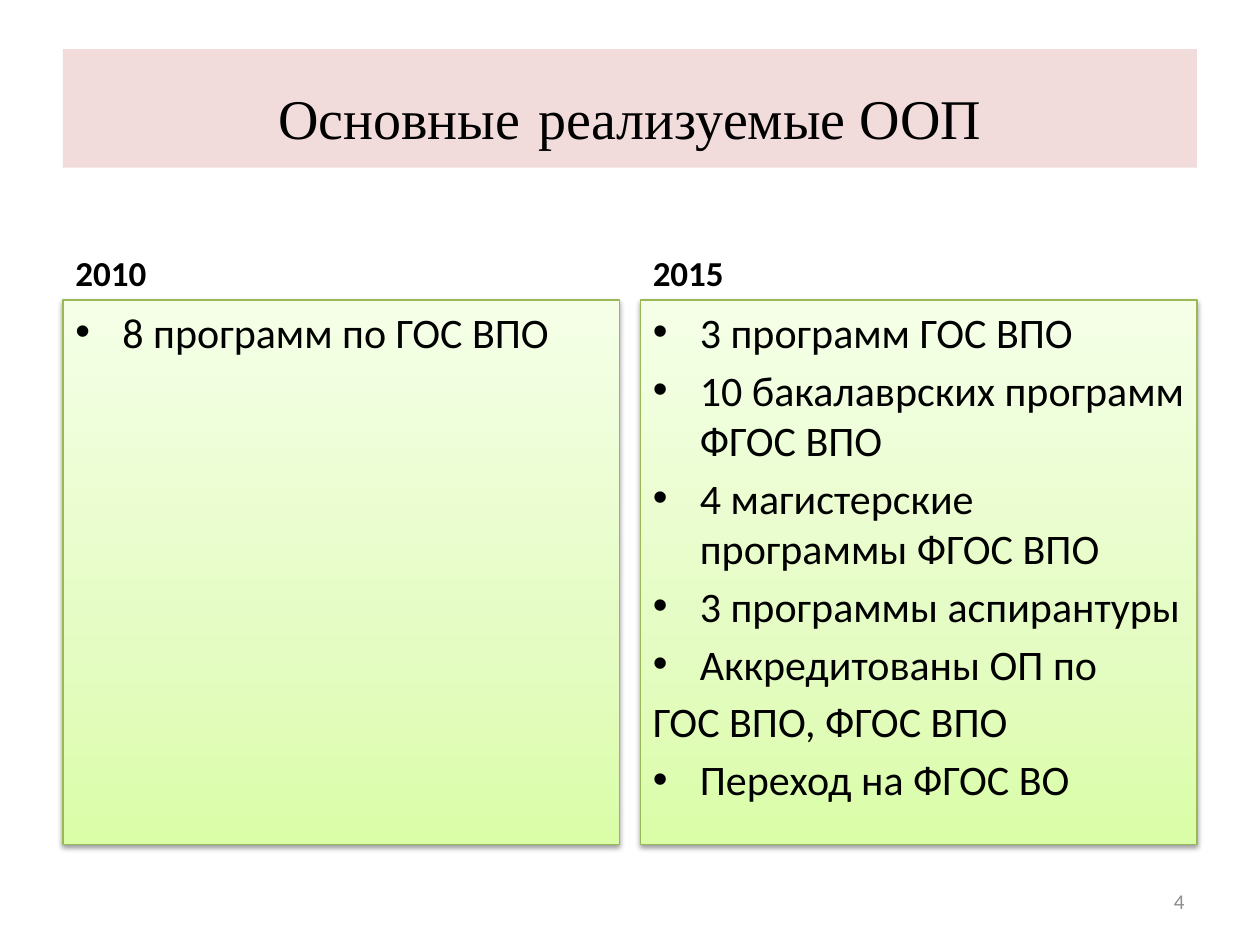
import copy

import lxml.etree
import pptx
import pptx.dml.color
import pptx.enum.shapes
import pptx.enum.text
import pptx.oxml
import pptx.oxml.ns
import pptx.util

Cm = pptx.util.Cm
Pt = pptx.util.Pt
ALIGN = pptx.enum.text.PP_ALIGN
ANCHOR = pptx.enum.text.MSO_ANCHOR
qn = pptx.oxml.ns.qn

MARGIN = 1.27
CONTENT_WIDTH = 22.86
COLUMN_WIDTH = 11.22
GREEN_STOPS = [(0, "DAFDA7"), (0.35, "E4FCC2"), (1, "F5FFE7")]
BULLET_INDENT = Cm(0.95)
COLUMNS = [
    ("2010", ["8 программ по ГОС ВПО"]),
    ("2015", [
        "3 программ ГОС ВПО",
        "10 бакалаврских программ ФГОС ВПО",
        "4 магистерские программы ФГОС ВПО",
        "3 программы аспирантуры",
        "Аккредитованы ОП по",
        "ГОС ВПО, ФГОС ВПО",
        "Переход на ФГОС ВО",
    ]),
]
UNBULLETED = {"ГОС ВПО, ФГОС ВПО"}


def color(value):
    return pptx.dml.color.RGBColor.from_string(value)


def style_font(font, size, name="Calibri", fill="000000", bold=False):
    font.size = Pt(size)
    font.name = name
    font.bold = bold
    font.color.rgb = color(fill)


def add_rectangle(slide, left, top, width, height):
    shape = slide.shapes.add_shape(
        pptx.enum.shapes.MSO_SHAPE.RECTANGLE,
        Cm(left), Cm(top), Cm(width), Cm(height))
    shape.shadow.inherit = False
    return shape


def add_label(slide, text, box, size, anchor, align=ALIGN.LEFT, **font_style):
    label = slide.shapes.add_textbox(*(Cm(length) for length in box))
    frame = label.text_frame
    frame.word_wrap = True
    frame.vertical_anchor = anchor
    frame.text = text
    paragraph = frame.paragraphs[0]
    paragraph.alignment = align
    style_font(paragraph.runs[0].font, size, **font_style)


def add_title(slide):
    shape = add_rectangle(slide, MARGIN, 0.99, CONTENT_WIDTH, 2.39)
    shape.fill.solid()
    shape.fill.fore_color.rgb = color("F2DCDB")
    shape.line.fill.background()
    shape.text_frame.vertical_anchor = ANCHOR.MIDDLE
    paragraph = shape.text_frame.paragraphs[0]
    paragraph.alignment = ALIGN.CENTER
    for text, size, name in [("Основные", 32, "Times New Roman"),
                             (" ", 44, "Calibri"),
                             ("реализуемые ООП", 32, "Times New Roman")]:
        run = paragraph.add_run()
        run.text = text
        style_font(run.font, size, name)


def fill_gradient(shape, stops):
    """Fill from bottom to top with any number of stops."""
    shape.fill.gradient()
    shape.fill.gradient_angle = 90
    stop_list = shape.element.spPr.find(".//" + qn("a:gsLst"))
    for _ in range(len(stops) - len(stop_list)):
        stop_list.append(copy.deepcopy(stop_list[0]))
    for stop, (position, value) in zip(shape.fill.gradient_stops, stops):
        stop.position = position
        stop.color.rgb = color(value)


def add_shadow(shape):
    effects = shape.element.spPr.find(qn("a:effectLst"))
    shadow = lxml.etree.SubElement(
        effects, qn("a:outerShdw"), blurRad="40000", dist="20000",
        dir="5400000", rotWithShape="0")
    black = lxml.etree.SubElement(shadow, qn("a:srgbClr"), val="000000")
    lxml.etree.SubElement(black, qn("a:alpha"), val="38000")


def set_bullet(paragraph, bulleted):
    properties = paragraph._p.get_or_add_pPr()
    properties.set("marL", str(BULLET_INDENT))
    properties.set("indent", str(-BULLET_INDENT))
    if bulleted:
        lxml.etree.SubElement(properties, qn("a:buFont"), typeface="Arial")
        lxml.etree.SubElement(properties, qn("a:buChar"), char="•")
    else:
        lxml.etree.SubElement(properties, qn("a:buNone"))


def add_list_panel(slide, left, items):
    shape = add_rectangle(slide, left, 6.05, COLUMN_WIDTH, 10.97)
    fill_gradient(shape, GREEN_STOPS)
    shape.line.color.rgb = color("98B955")
    shape.line.width = Pt(0.75)
    add_shadow(shape)
    frame = shape.text_frame
    frame.vertical_anchor = ANCHOR.TOP
    frame.text = "\n".join(items)
    for index, paragraph in enumerate(frame.paragraphs):
        set_bullet(paragraph, paragraph.text not in UNBULLETED)
        paragraph.alignment = ALIGN.LEFT
        if index:
            paragraph.space_before = Pt(4.2)
        style_font(paragraph.runs[0].font, 24)


def main():
    presentation = pptx.Presentation()
    presentation.slide_width = Cm(25.4)
    presentation.slide_height = Cm(19.05)
    slide = presentation.slides.add_slide(presentation.slide_layouts[6])
    add_title(slide)
    step = CONTENT_WIDTH - COLUMN_WIDTH
    for index, (year, items) in enumerate(COLUMNS):
        left = MARGIN + index * step
        add_label(slide, year, (left, 4.27, COLUMN_WIDTH, 1.78), 20,
                  ANCHOR.BOTTOM, bold=True)
        add_list_panel(slide, left, items)
    add_label(slide, "4", (18.2, 17.66, 5.93, 1.01), 12, ANCHOR.MIDDLE,
              ALIGN.RIGHT, fill="8C8C8C")
    presentation.save("out.pptx")


if __name__ == "__main__":
    main()
